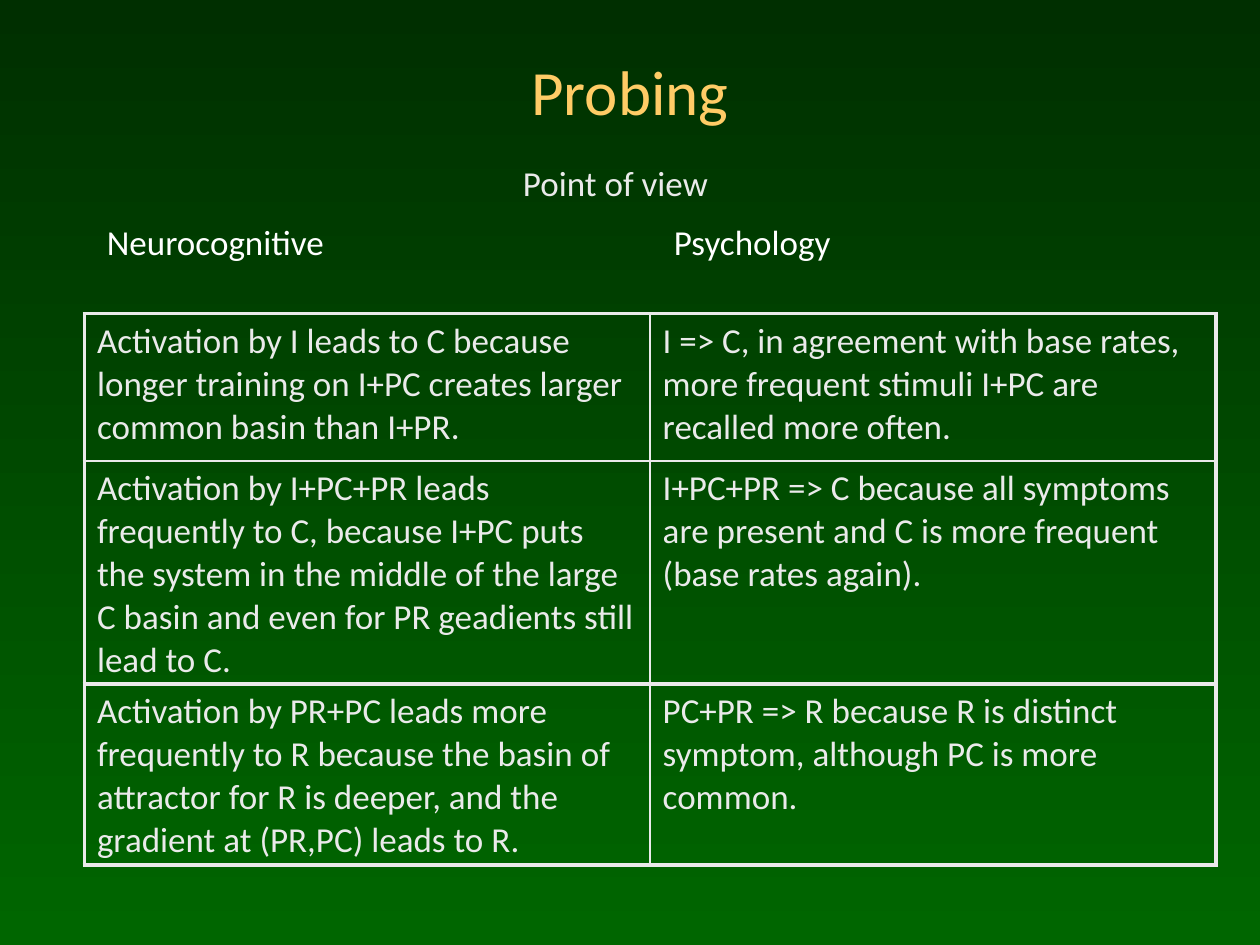
from lxml import etree
from pptx import Presentation, util as u
from pptx.dml.color import RGBColor
from pptx.enum import text
from pptx.oxml import parse_xml
from pptx.oxml.ns import qn

NS = 'xmlns:a="http://schemas.openxmlformats.org/drawingml/2006/main"'
PALE = "EAEAEA"


def color(value):
    return RGBColor.from_string(value)


def style(font, size, value):
    font.name, font.size, font.bold = "Calibri", u.Pt(size), False
    font.color.rgb = color(value)


deck = Presentation()
deck.slide_width, deck.slide_height = u.Inches(10), u.Inches(7.5)
W, H = deck.slide_width, deck.slide_height
slide = deck.slides.add_slide(deck.slide_layouts[5])

# Background: dark green at the top, lighter at the bottom
backdrop = slide.background.fill
backdrop.gradient()
backdrop.gradient_angle = 270
for stop, shade in zip(backdrop.gradient_stops, ("002F00", "006600")):
    stop.color.rgb = color(shade)

# Title with a text shadow
title = slide.shapes.title
title.left, title.top = int(W * 0.075), int(H * 0.05)
title.width, title.height = int(W * 0.85), int(H * 0.092)
title.text_frame.text = "Probing"
title.text_frame.vertical_anchor = text.MSO_ANCHOR.MIDDLE
heading = title.text_frame.paragraphs[0]
heading.alignment = text.PP_ALIGN.CENTER
style(heading.runs[0].font, 36, "FFCC66")
heading.runs[0]._r.rPr.find(qn("a:solidFill")).addnext(parse_xml(
    f'<a:effectLst {NS}><a:outerShdw dist="35921" dir="2700000">'
    '<a:srgbClr val="000000"/></a:outerShdw></a:effectLst>'))

# Subtitle and the two column headings, the second one set by a tab stop
labels = [
    ("Point of view", 0.335, 0.164, 0.307, PALE, text.PP_ALIGN.CENTER),
    ("Neurocognitive\tPsychology", 0.075, 0.227, 0.888, "FFFFFF", text.PP_ALIGN.LEFT),
]
for wording, left, top, width, ink, align in labels:
    label = slide.shapes.add_textbox(int(W * left), int(H * top), int(W * width), int(H * 0.06))
    label.text_frame.word_wrap = True
    line = label.text_frame.paragraphs[0]
    line.text, line.alignment = wording, align
    style(line.font, 20, ink)
    if "\t" in wording:
        line._p.pPr.insert(0, parse_xml(
            f'<a:tabLst {NS}><a:tab pos="{u.Inches(4.5)}" algn="l"/></a:tabLst>'))

# Comparison of the two points of view
views = [
    ("Activation by I leads to C because longer training on I+PC creates larger "
     "common basin than I+PR.",
     "I => C, in agreement with base rates, more frequent stimuli I+PC are "
     "recalled more often."),
    ("Activation by I+PC+PR leads frequently to C, because I+PC puts the system in "
     "the middle of the large C basin and even for PR geadients still lead to C.",
     "I+PC+PR => C because all symptoms are present and C is more frequent "
     "(base rates again)."),
    ("Activation by PR+PC leads more frequently to R because the basin of attractor "
     "for R is deeper, and the gradient at (PR,PC) leads to R.",
     "PC+PR => R because R is distinct symptom, although PC is more common."),
]
row_heights = (1.17, 1.77, 1.43)
rule_widths = (2.25, 1, 2.25, 2.25)  # horizontal rules from top to bottom
side_widths = (2.25, 1, 2.25)        # vertical rules from left to right
comparison = slide.shapes.add_table(
    3, 2, int(W * 0.067), int(H * 0.332), int(W * 0.898), u.Inches(sum(row_heights))).table
comparison.first_row = comparison.horz_banding = False

for r, pair in enumerate(views):
    comparison.rows[r].height = u.Inches(row_heights[r])
    for c, view in enumerate(pair):
        cell = comparison.cell(r, c)
        cell.text = view
        cell.fill.background()
        style(cell.text_frame.paragraphs[0].font, 20, PALE)
        edges = {"lnL": side_widths[c], "lnR": side_widths[c + 1],
                 "lnT": rule_widths[r], "lnB": rule_widths[r + 1]}
        for place, (edge, points) in enumerate(edges.items()):
            border = etree.fromstring(
                f'<a:{edge} {NS} w="{u.Pt(points)}"><a:solidFill>'
                f'<a:srgbClr val="{PALE}"/></a:solidFill></a:{edge}>')
            cell._tc.tcPr.insert(place, border)

deck.save("out.pptx")
